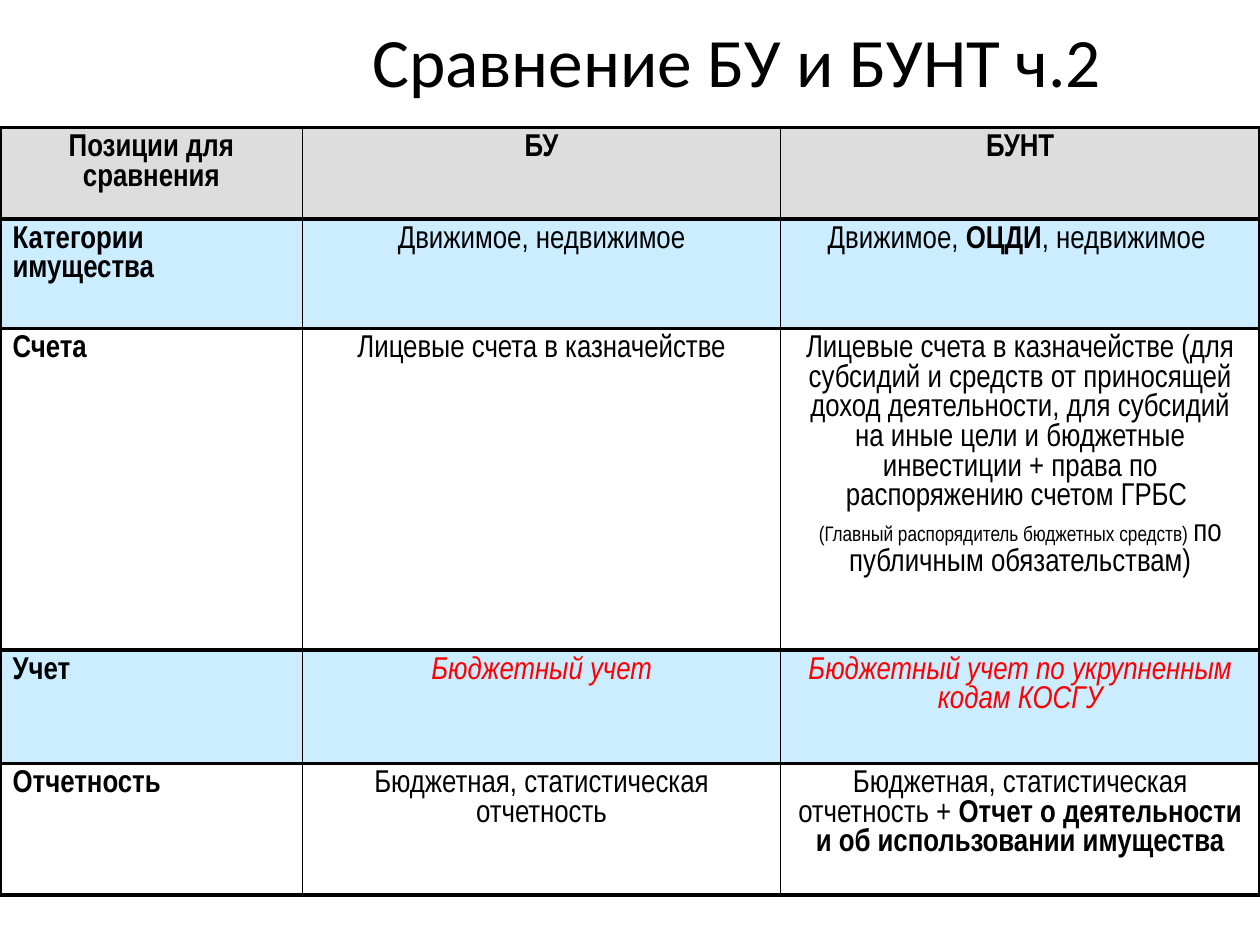
from lxml import etree
from pptx import Presentation
from pptx.dml.color import RGBColor
from pptx.enum.text import MSO_ANCHOR, PP_ALIGN
from pptx.oxml.ns import qn
from pptx.util import Pt

CENTER, LEFT = PP_ALIGN.CENTER, PP_ALIGN.LEFT
MIDDLE = MSO_ANCHOR.MIDDLE

BLACK, RED = "000000", "FF0000"
GREY, BLUE, WHITE = "DDDDDD", "CCECFF", "FFFFFF"
THICK, THIN = 2.25, 1

COLUMN_WIDTHS = [173, 273, 274]
ROW_HEIGHTS = [52.5, 62.5, 152, 65, 75]
ROW_FILLS = [GREY, BLUE, WHITE, BLUE, WHITE]

# Run styles
PLAIN = {}
BOLD = {"bold": True}
SMALL = {"size": 12}
ACCENT = {"italic": True, "color": RED}

# Each cell is a list of paragraphs, each paragraph a list of (text, style)
ROWS = [
    [
        [[("Позиции для сравнения", BOLD)]],
        [[("БУ", BOLD)]],
        [[("БУНТ", BOLD)]],
    ],
    [
        [[("Категории имущества", BOLD)]],
        [[("Движимое, недвижимое", PLAIN)]],
        [[("Движимое, ", PLAIN), ("ОЦДИ", BOLD), (", недвижимое ", PLAIN)]],
    ],
    [
        [[("Счета", BOLD)]],
        [[("Лицевые счета в казначействе", PLAIN)]],
        [
            [("Лицевые счета в казначействе (для субсидий и средств от "
              "приносящей доход деятельности, для субсидий на иные цели и "
              "бюджетные инвестиции + права по распоряжению счетом ГРБС ", PLAIN)],
            [("(Главный распорядитель бюджетных средств) ", SMALL),
             ("по публичным обязательствам)", PLAIN)],
        ],
    ],
    [
        [[("Учет", BOLD)]],
        [[("Бюджетный учет", ACCENT)]],
        [[("Бюджетный учет по укрупненным кодам КОСГУ", ACCENT)]],
    ],
    [
        [[("Отчетность", BOLD)]],
        [[("Бюджетная, статистическая отчетность", PLAIN)]],
        [[("Бюджетная, статистическая отчетность + ", PLAIN),
          ("Отчет о деятельности и об использовании имущества", BOLD)]],
    ],
]


def rgb(hex_color):
    return RGBColor.from_string(hex_color)


def style_run(span, font="Arial Narrow", size=18, color=BLACK, bold=False, italic=False):
    span.font.name = font
    span.font.size = Pt(size)
    span.font.color.rgb = rgb(color)
    span.font.bold = bold
    span.font.italic = italic


def add_title(page, text):
    box = page.shapes.add_textbox(Pt(122), Pt(9.5), Pt(598), Pt(49.5))
    frame = box.text_frame
    frame.word_wrap = True
    frame.vertical_anchor = MIDDLE
    frame.text = text
    para = frame.paragraphs[0]
    para.alignment = CENTER
    style_run(para.runs[0], font="Calibri", size=39.6)


def set_borders(cell, widths):
    """Draw solid black borders; widths are for left, right, top, bottom."""
    properties = cell._tc.get_or_add_tcPr()
    for index, (tag, width) in enumerate(zip(("lnL", "lnR", "lnT", "lnB"), widths)):
        line = etree.Element(qn(f"a:{tag}"), w=str(Pt(width)))
        fill = etree.SubElement(line, qn("a:solidFill"))
        etree.SubElement(fill, qn("a:srgbClr"), val=BLACK)
        properties.insert(index, line)


def fill_cell(cell, paragraphs, alignment, color):
    cell.fill.solid()
    cell.fill.fore_color.rgb = rgb(color)
    frame = cell.text_frame
    for index, pieces in enumerate(paragraphs):
        para = frame.add_paragraph() if index else frame.paragraphs[0]
        para.alignment = alignment
        para.space_before = Pt(3.6)
        for text, style in pieces:
            span = para.add_run()
            span.text = text
            style_run(span, **style)


def add_comparison(page):
    shape = page.shapes.add_table(
        len(ROWS), len(COLUMN_WIDTHS), Pt(0), Pt(72.75),
        Pt(sum(COLUMN_WIDTHS)), Pt(sum(ROW_HEIGHTS)))
    table = shape.table
    for column, width in zip(table.columns, COLUMN_WIDTHS):
        column.width = Pt(width)
    for row, height in zip(table.rows, ROW_HEIGHTS):
        row.height = Pt(height)

    last = len(COLUMN_WIDTHS) - 1
    for r, row in enumerate(ROWS):
        for c, paragraphs in enumerate(row):
            cell = table.cell(r, c)
            # Row names are left-aligned below the header
            alignment = LEFT if r and c == 0 else CENTER
            fill_cell(cell, paragraphs, alignment, ROW_FILLS[r])
            left = THICK if c == 0 else THIN
            right = THICK if c == last else THIN
            set_borders(cell, (left, right, THICK, THICK))


def main():
    deck = Presentation()
    deck.slide_width, deck.slide_height = Pt(720), Pt(540)
    page = deck.slides.add_slide(deck.slide_layouts[6])
    add_title(page, "Сравнение БУ и БУНТ ч.2")
    add_comparison(page)
    deck.save("out.pptx")


if __name__ == "__main__":
    main()
